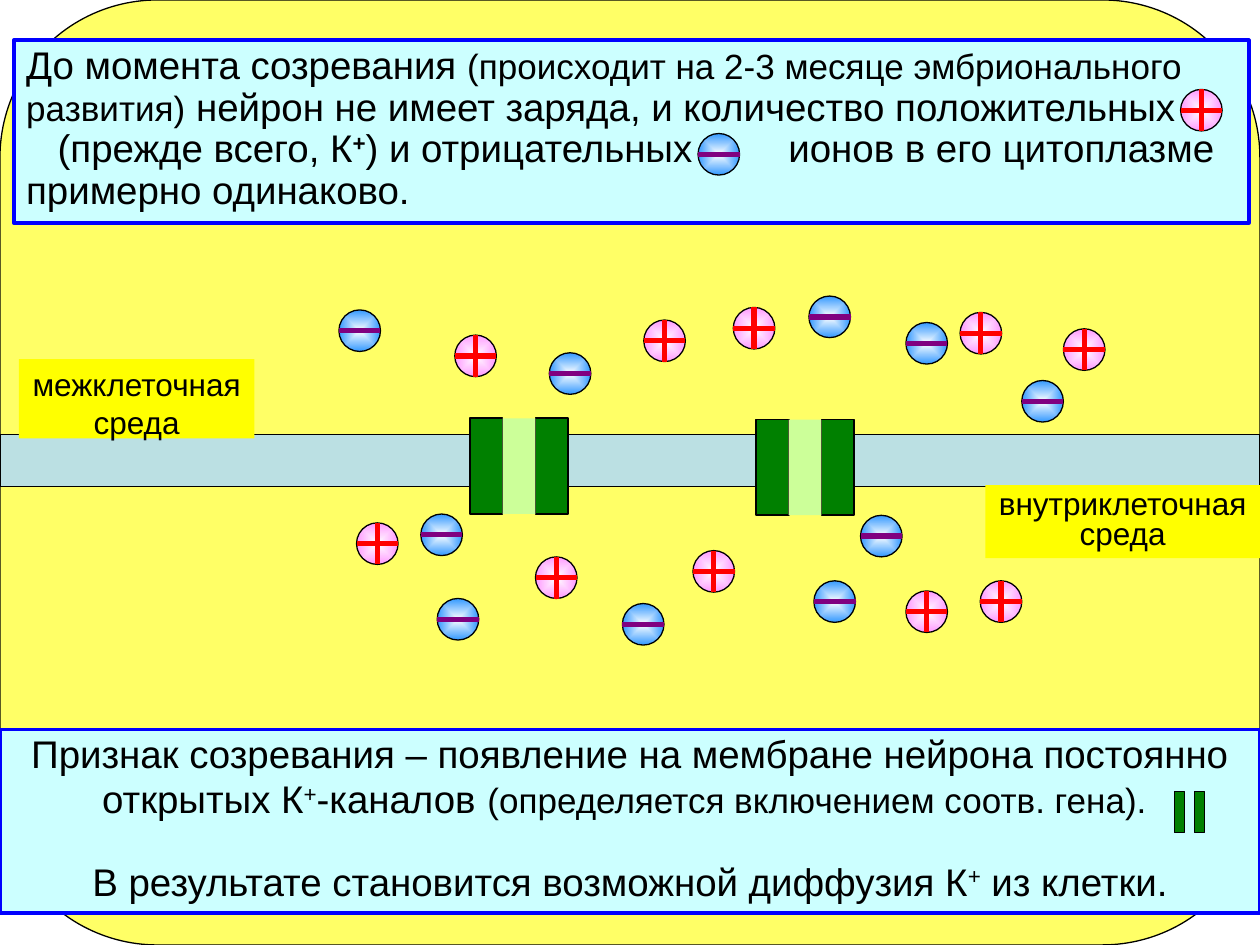
from lxml import etree
from pptx import Presentation
from pptx.dml.color import RGBColor
from pptx.enum.shapes import MSO_CONNECTOR as LINE, MSO_SHAPE as SHAPE
from pptx.enum.text import MSO_ANCHOR as ANCHOR, PP_ALIGN as ALIGN
from pptx.oxml.ns import qn
from pptx.util import Inches, Pt

COLORS = {
    "black": "000000", "cell": "FFFF66", "membrane": "BBE0E3", "panel": "CCFFFF",
    "border": "0000FF", "label": "FFFF00", "white": "FFFFFF", "pink": "FF99FF",
    "blue": "3399FF", "plus": "FF0000", "minus": "800080", "gate": "008000",
    "pore": "CCFF99",
}
ION = 0.33
NEGATIVE = [(4.36, 2.8), (7.19, 2.56), (6.42, 2.35), (8.11, 3.02), (3.34, 4.08), (6.83, 4.09),
            (6.46, 4.61), (4.94, 4.79), (3.47, 4.75), (2.69, 2.46)]
POSITIVE = [(3.61, 2.66), (5.5, 4.37), (4.25, 4.42), (7.19, 4.69), (7.78, 4.61), (8.44, 2.61),
            (7.62, 2.48), (5.82, 2.44), (5.11, 2.54), (2.83, 4.15)]


def rgb(name):
    return RGBColor.from_string(COLORS[name])


class Diagram:
    """Draws styled shapes, text, ions and channels on the current slide."""

    font = "Arial"
    styles = {"bold": ("b", "1"), "super": ("baseline", "30000"), "gap": ("spc", "4870")}

    def __init__(self, slide):
        self.slide = slide

    def shape(self, kind, x, y, w, h, fill, line=None, weight=0.75, parent=None):
        shapes = (parent or self.slide).shapes
        sp = shapes.add_shape(kind, Inches(x), Inches(y), Inches(w), Inches(h))
        sp.shadow.inherit = False
        sp.fill.solid()
        sp.fill.fore_color.rgb = rgb(fill)
        if line:
            sp.line.color.rgb = rgb(line)
            sp.line.width = Pt(weight)
        else:
            sp.line.fill.background()
        return sp

    def box(self, x, y, w, h, fill, line=None, wrap=True):
        sp = self.shape(SHAPE.RECTANGLE, x, y, w, h, fill, line, 2.25)
        tf = sp.text_frame
        tf.word_wrap = wrap
        tf.vertical_anchor = ANCHOR.TOP
        return tf

    def paragraph(self, tf, runs, spacing, align=ALIGN.CENTER, before=0, indent=0):
        p = tf.paragraphs[0]
        if p.runs:
            p = tf.add_paragraph()
        if indent:
            pPr = p._p.get_or_add_pPr()
            pPr.set("marL", "0")
            pPr.set("indent", str(Inches(indent)))
        p.alignment = align
        p.line_spacing = spacing
        if before:
            p.space_before = Pt(before)
        for text, size, *names in runs:
            r = p.add_run()
            r.text = text
            r.font.name = self.font
            r.font.size = Pt(size)
            r.font.color.rgb = rgb("black")
            for name in names:
                r.font._element.set(*self.styles[name])

    def stroke(self, x1, y1, x2, y2, color, parent):
        ends = [Inches(v) for v in (x1, y1, x2, y2)]
        c = parent.shapes.add_connector(LINE.STRAIGHT, *ends)
        c.line.color.rgb = rgb(color)
        c.line.width = Pt(3)
        etree.SubElement(c._element.spPr, qn("a:effectLst"))

    def ion(self, x, y, positive):
        group = self.slide.shapes.add_group_shape()
        edge, sign = ("pink", "plus") if positive else ("blue", "minus")
        sp = self.shape(SHAPE.OVAL, x, y, ION, ION, edge, "black", parent=group)
        sp.fill.gradient()
        for stop, color, pos in zip(sp.fill.gradient_stops, ("white", edge), (0, 1)):
            stop.color.rgb = rgb(color)
            stop.position = pos
        grad = sp._element.spPr.find(qn("a:gradFill"))
        grad.remove(grad.find(qn("a:lin")))
        path = etree.SubElement(grad, qn("a:path"), path="shape")
        etree.SubElement(path, qn("a:fillToRect"), l="50000", t="50000", r="50000", b="50000")
        mid = ION / 2
        self.stroke(x, y + mid, x + ION, y + mid, sign, group)
        if positive:
            self.stroke(x + mid, y + ION, x + mid, y, sign, group)

    def channel(self, x, y, w, h, gap, weight, pore=True):
        group = self.slide.shapes.add_group_shape()
        for left in (x, x + w + gap):
            self.shape(SHAPE.RECTANGLE, left, y, w, h, "gate", "black", weight, group)
        if pore:
            self.shape(SHAPE.RECTANGLE, x + w, y, gap, h, "pore", parent=group)


def main():
    prs = Presentation()
    prs.slide_width, prs.slide_height = Inches(10), Inches(7.5)
    s = Diagram(prs.slides.add_slide(prs.slide_layouts[6]))

    s.shape(SHAPE.ROUNDED_RECTANGLE, 0, 0, 10, 7.5, "cell", "black")
    s.shape(SHAPE.RECTANGLE, 0, 3.45, 10, 0.41, "membrane", "black")

    tf = s.box(0.11, 0.32, 9.8, 1.45, "panel", "border")
    s.paragraph(tf, [
        ("До момента созревания ", 22),
        ("(происходит на 2-3 месяце эмбрионального развития)", 20),
        (" нейрон не имеет заряда, и количество положительных", 22),
    ], 0.9, ALIGN.LEFT)
    s.paragraph(tf, [
        ("(прежде всего, К", 22), ("+", 22, "bold", "super"),
        (") и отрицательных", 22), (" ", 22, "gap"),
        ("ионов в его цитоплазме примерно одинаково.", 22),
    ], 0.9, ALIGN.LEFT, indent=0.25)
    s.ion(9.37, 0.71, True)
    s.ion(5.54, 1.06, False)

    tf = s.box(7.82, 3.85, 2.18, 0.58, "label", wrap=False)
    for word in ("внутриклеточная", "среда"):
        s.paragraph(tf, [(word, 18)], 0.8)

    for x, y in NEGATIVE:
        s.ion(x, y, False)
    for x, y in POSITIVE:
        s.ion(x, y, True)

    tf = s.box(0, 5.79, 10, 1.46, "panel", "border")
    s.paragraph(tf, [
        ("Признак созревания – появление на мембране нейрона постоянно открытых К", 22),
        ("+", 22, "super"), ("-каналов", 22), (" ", 24),
        ("(определяется включением соотв. гена).", 20), (" ", 22),
    ], 0.9)
    s.paragraph(tf, [
        ("В результате становится возможной диффузия К", 22),
        ("+", 22, "super"), (" из клетки.", 22),
    ], 0.9, before=23)
    s.channel(9.32, 6.28, 0.08, 0.33, 0.08, 0.75, pore=False)

    tf = s.box(0.15, 2.85, 1.87, 0.63, "label", wrap=False)
    for word in ("межклеточная", "среда"):
        s.paragraph(tf, [(word, 18)], 1.0)

    for x, y in ((3.73, 3.32), (6, 3.33)):
        s.channel(x, y, 0.26, 0.76, 0.26, 1)

    prs.save("out.pptx")


if __name__ == "__main__":
    main()
